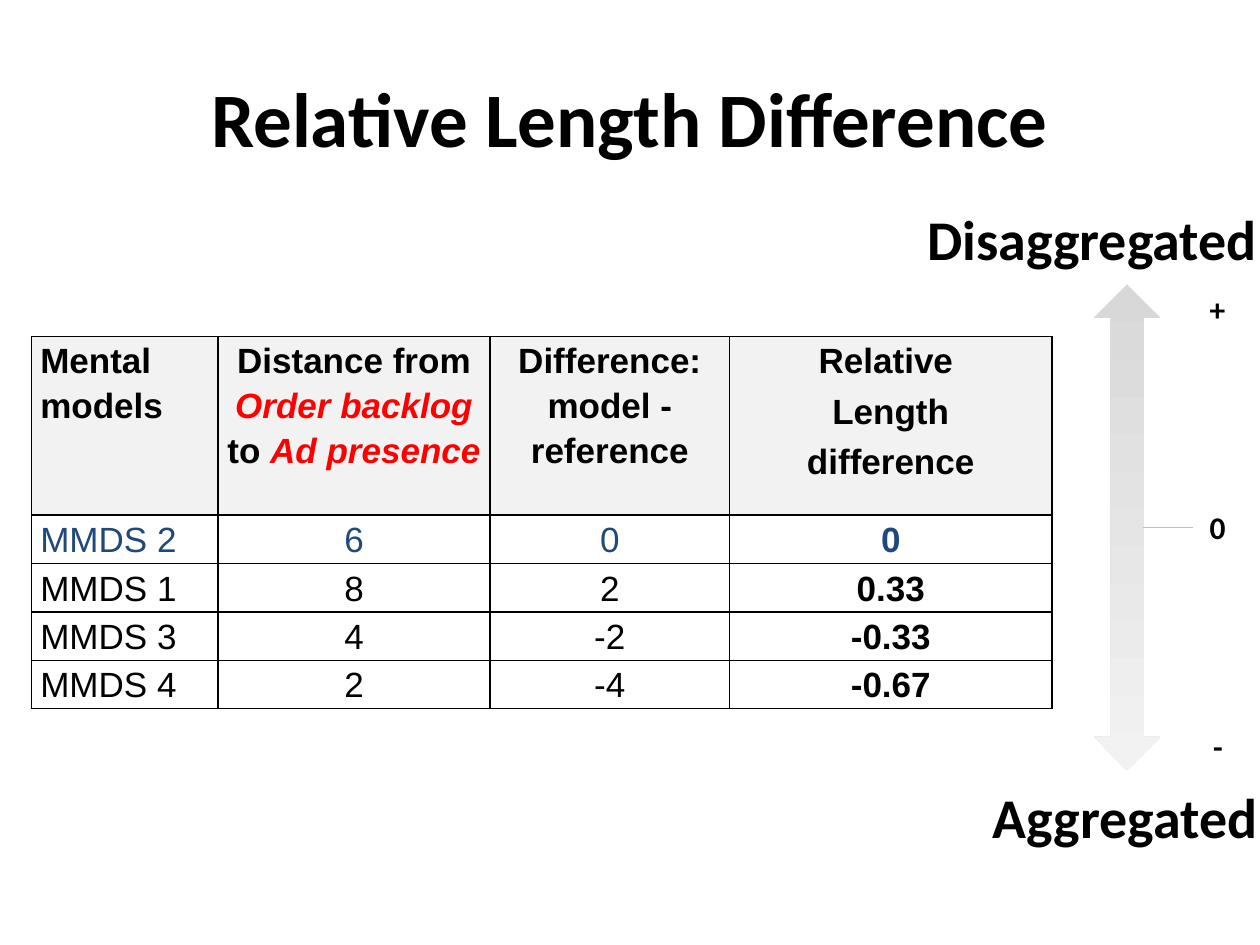
from pptx import Presentation
from pptx.dml.color import RGBColor
from pptx.enum.shapes import MSO_CONNECTOR, MSO_SHAPE
from pptx.enum.text import MSO_ANCHOR, PP_ALIGN
from pptx.oxml import parse_xml
from pptx.oxml.ns import nsdecls
from pptx.util import Inches, Pt

WIDE, HIGH = Inches(10), Inches(7.5)
BLACK = RGBColor(0x00, 0x00, 0x00)
RED = RGBColor(0xFF, 0x00, 0x00)
NAVY = RGBColor(0x1F, 0x49, 0x7D)
PALE = RGBColor(0xF2, 0xF2, 0xF2)
GREY = RGBColor(0xD8, 0xD8, 0xD8)
RULE = RGBColor(0xBF, 0xBF, 0xBF)

TERM = {"color": RED, "italic": True}
HEADS = [
    [["Mental models"]],
    [["Distance from ", ("Order backlog ", TERM), "to ", ("Ad presence", TERM)]],
    [["Difference: model - reference"]],
    [["Relative "], ["Length"], ["difference"]],
]
ROWS = [
    ("MMDS 2", "6", "0", "0"),
    ("MMDS 1", "8", "2", "0.33"),
    ("MMDS 3", "4", "-2", "-0.33"),
    ("MMDS 4", "2", "-4", "-0.67"),
]
COLS = (1.48, 2.16, 1.9, 2.56)
TALL = (1.42, 0.36, 0.36, 0.36, 0.36)


def write(frame, paras, size=20, font="Calibri", color=BLACK, bold=True,
          italic=False, align=PP_ALIGN.LEFT, line=None, before=None):
    """Fill a frame; each paragraph lists plain runs or (text, format) pairs."""
    for i, runs in enumerate(paras):
        para = frame.paragraphs[0] if i == 0 else frame.add_paragraph()
        para.alignment, para.line_spacing = align, line
        if before is not None:
            para.space_before = Pt(before)
        for part in runs:
            text, own = (part, {}) if isinstance(part, str) else part
            run = para.add_run()
            run.text = text
            run.font.name, run.font.size, run.font.bold = font, Pt(size), bold
            run.font.italic = own.get("italic", italic)
            run.font.color.rgb = own.get("color", color)


def label(slide, box, text, wrap=False, **form):
    frame = slide.shapes.add_textbox(*map(int, box)).text_frame
    frame.word_wrap = wrap
    frame.vertical_anchor = MSO_ANCHOR.MIDDLE
    write(frame, [[text]], **form)


def border(cell):
    props = cell._tc.get_or_add_tcPr()
    for i, side in enumerate("LRTB"):
        props.insert(i, parse_xml(
            f'<a:ln{side} {nsdecls("a")} w="12700"><a:solidFill>'
            f'<a:srgbClr val="{BLACK}"/></a:solidFill></a:ln{side}>'))


def title(slide, box):
    label(slide, box, "Relative Length Difference", wrap=True, size=44,
          align=PP_ALIGN.CENTER)


def grid(slide, box):
    x, y, w, h = box
    table = slide.shapes.add_table(
        len(TALL), len(COLS), *map(int, box)).table
    table.first_row = table.horz_banding = False
    for col, part in zip(table.columns, COLS):
        col.width = int(w * part / sum(COLS))
    for row, part in zip(table.rows, TALL):
        row.height = int(h * part / sum(TALL))

    cells = [HEADS] + [[[[text]] for text in row] for row in ROWS]
    for r, row in enumerate(cells):
        for c, paras in enumerate(row):
            cell = table.cell(r, c)
            cell.margin_left = cell.margin_right = Inches(0.07)
            cell.margin_top = cell.margin_bottom = 0
            if r == 0:
                cell.fill.solid()
                cell.fill.fore_color.rgb = PALE
            else:
                cell.fill.background()
            border(cell)
            first = PP_ALIGN.LEFT if r else PP_ALIGN.JUSTIFY
            write(cell.text_frame, paras, font="Arial",
                  color=NAVY if r == 1 else BLACK,
                  bold=r == 0 or c == len(COLS) - 1,
                  align=PP_ALIGN.CENTER if c else first,
                  line=1.15, before=3)


def scale(slide, box):
    x, y, w, h = box
    # Names of the two ends
    tag = 0.137 * h
    label(slide, (x, y, w, tag), "Disaggregated", size=32)
    label(slide, (x + 0.183 * w, y + h - tag, 0.817 * w, tag),
          "Aggregated", size=32)

    # Shaded double arrow
    top, tall = y + tag, h - 2 * tag
    arrow = slide.shapes.add_shape(
        MSO_SHAPE.UP_DOWN_ARROW,
        *map(int, (x + 0.5 * w, top, 0.187 * w, tall)))
    arrow.shadow.inherit = False
    arrow.line.fill.background()
    arrow.fill.gradient()
    arrow.fill.gradient_angle = 270
    for stop, shade, at in zip(arrow.fill.gradient_stops, (GREY, PALE), (0, 1)):
        stop.color.rgb, stop.position = shade, at

    # Zero mark
    mid = int(top + tall / 2)
    tick = slide.shapes.add_connector(
        MSO_CONNECTOR.STRAIGHT, int(x + 0.637 * w), mid,
        int(x + 0.778 * w), mid)
    tick.line.color.rgb, tick.line.width = RULE, Pt(0.75)
    tick._element.spPr.append(parse_xml(f'<a:effectLst {nsdecls("a")}/>'))

    # Signs down the side
    sign = 0.1 * tall
    for text, left, down in (("+", 0.789, 0), ("0", 0.789, 0.45),
                             ("-", 0.799, 0.9)):
        label(slide, (x + left * w, top + down * tall, 0.11 * w, sign),
              text, size=18)


def main():
    deck = Presentation()
    deck.slide_width, deck.slide_height = WIDE, HIGH
    slide = deck.slides.add_slide(deck.slide_layouts[6])

    def share(x, y, w, h):
        return x * WIDE, y * HIGH, w * WIDE, h * HIGH

    scale(slide, share(0.726, 0.204, 0.284, 0.708))
    title(slide, share(0.05, 0.04, 0.9, 0.167))
    grid(slide, share(0.025, 0.356, 0.81, 0.381))
    deck.save("out.pptx")


if __name__ == "__main__":
    main()
